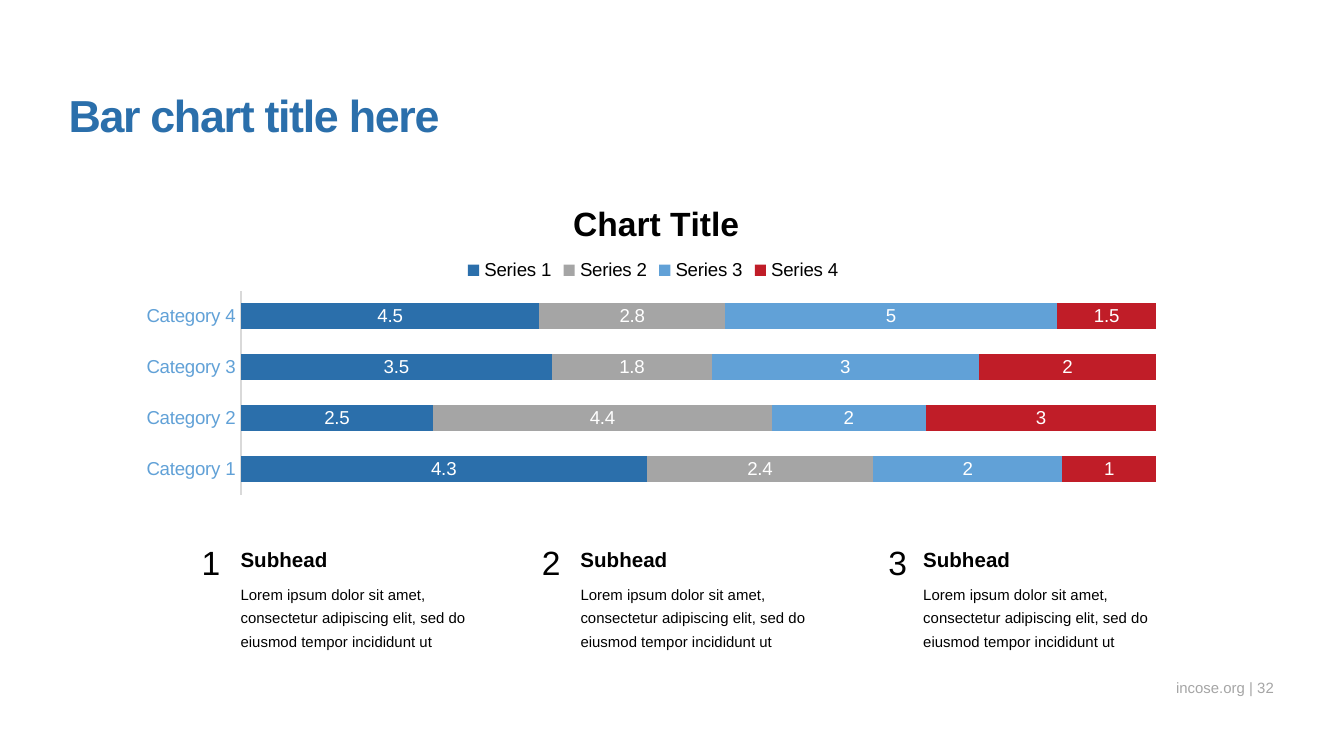
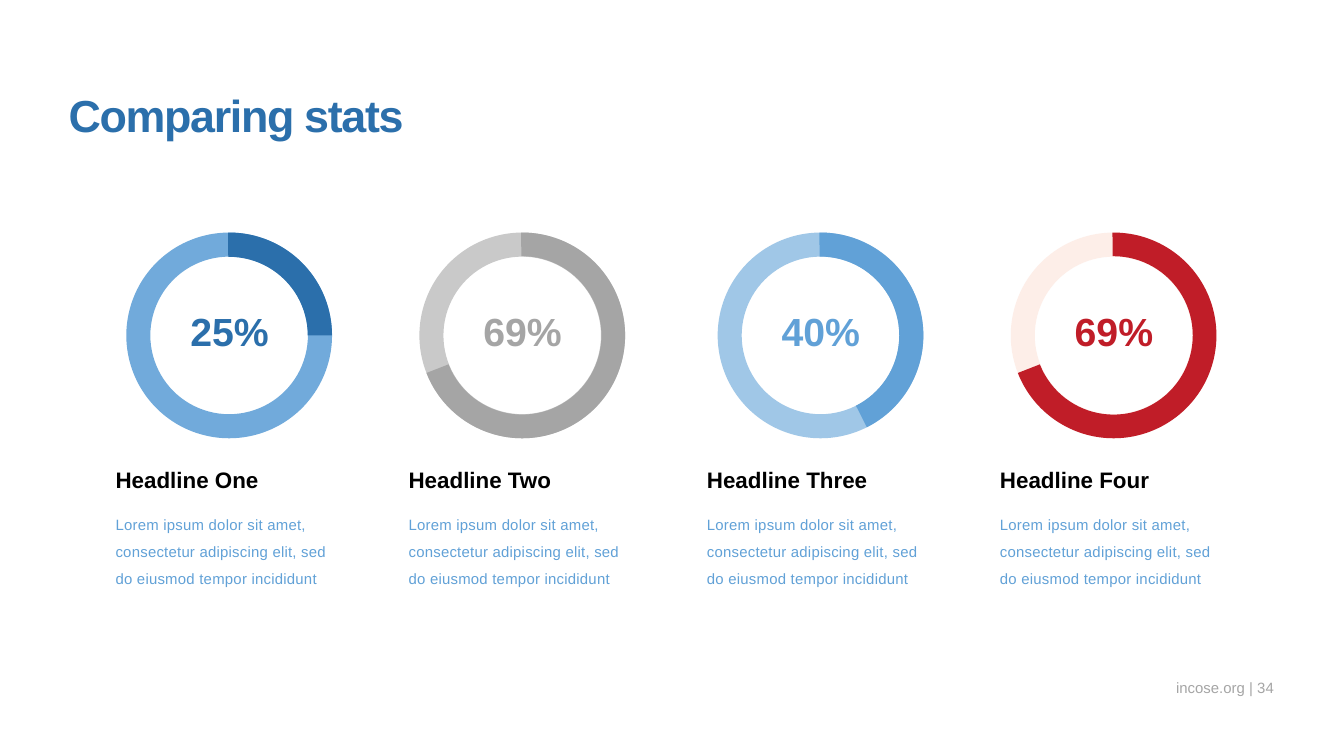
import pptx
import pptx.chart.data
import pptx.dml.color
import pptx.enum.chart
import pptx.enum.shapes
import pptx.enum.text
import pptx.oxml
import pptx.oxml.ns
import pptx.util

Pt = pptx.util.Pt
qn = pptx.oxml.ns.qn
ALIGN = pptx.enum.text.PP_ALIGN
ANCHOR = pptx.enum.text.MSO_ANCHOR
AUTO_SIZE = pptx.enum.text.MSO_AUTO_SIZE
SHAPE = pptx.enum.shapes.MSO_SHAPE

# Shared style
FONT = "Arial"
BLUE, GRAY, SKY, RED = "2B6FAB", "A5A5A5", "61A1D7", "C01D28"
BLACK, WHITE, AXIS_GRAY = "000000", "FFFFFF", "D9D9D9"
TITLE_BOX = (36.7, 46.8, 647.3, 28.8)
FOOTER_BOX = (603.4, 359.3, 81.4, 13.7)

# Bar chart slide
BAR_TITLE, BAR_PAGE = "Bar chart title here", 32
CHART_TITLE = "Chart Title"
CHART_BOX = (67, 92.2, 563.8, 176.4)
CATEGORIES = ["Category 1", "Category 2", "Category 3", "Category 4"]
SERIES = [
    ("Series 1", BLUE, (4.3, 2.5, 3.5, 4.5)),
    ("Series 2", GRAY, (2.4, 4.4, 1.8, 2.8)),
    ("Series 3", SKY, (2, 2, 3, 5)),
    ("Series 4", RED, (1, 3, 2, 1.5)),
]
NOTE_TEXT = ("Lorem ipsum dolor sit amet, consectetur adipiscing elit, "
             "sed do eiusmod tempor incididunt ut")
# number, number left, text left
NOTES = [("1", 100.8, 128.9), ("2", 283, 311), ("3", 468.7, 494.6)]

# Ring slide
RING_TITLE, RING_PAGE = "Comparing stats", 34
RING_TEXT = ("Lorem ipsum dolor sit amet, consectetur adipiscing elit, "
             "sed do eiusmod tempor incididunt")
RING_START = 269.37
# left, headline, percent, colour, track colour, track opacity, end angle, thickness
RINGS = [
    (61.9, "Headline One", "25%", BLUE, "71AADB", 100, 0, 0.118),
    (218.9, "Headline Two", "69%", GRAY, "C9C9C9", 100, 158.56, 0.115),
    (378.7, "Headline Three", "40%", SKY, "A0C7E7", 100, 63.23, 0.117),
    (535.7, "Headline Four", "69%", RED, "FCDED2", 50, 158.56, 0.115),
]


def color(value):
    return pptx.dml.color.RGBColor.from_string(value)


def points(box):
    return [Pt(value) for value in box]


def write(frame, text, size, ink=BLACK, bold=False, align=ALIGN.LEFT,
          anchor=ANCHOR.TOP, line=None, tracking=None, grow=False):
    """Fill a text frame; a growing frame keeps its insets and does not wrap."""
    frame.word_wrap = not grow
    frame.auto_size = AUTO_SIZE.SHAPE_TO_FIT_TEXT if grow else AUTO_SIZE.NONE
    frame.vertical_anchor = anchor
    if not grow:
        frame.margin_left = frame.margin_right = 0
        frame.margin_top = frame.margin_bottom = 0
    para = frame.paragraphs[0]
    para.alignment = align
    if line:
        para.line_spacing = line
    span = para.add_run()
    span.text = text
    set_font(span.font, size, ink, bold)
    if tracking:
        span.font._element.set("spc", str(round(tracking * 100)))


def set_font(font, size, ink, bold=False):
    font.name, font.size, font.bold = FONT, Pt(size), bold
    font.color.rgb = color(ink)


def add_text(page, box, text, size, **style):
    frame = page.shapes.add_textbox(*points(box)).text_frame
    write(frame, text, size, **style)
    return frame


def add_page(deck, title, number):
    page = deck.slides.add_slide(deck.slide_layouts[5])
    holder = page.shapes.title
    holder.left, holder.top, holder.width, holder.height = points(TITLE_BOX)
    write(holder.text_frame, title, 24, ink=BLUE, bold=True, tracking=-0.7)
    footer = add_text(page, FOOTER_BOX, f"incose.org | {number}", 8, ink=GRAY,
                      align=ALIGN.RIGHT, anchor=ANCHOR.BOTTOM, line=1.5)
    footer.margin_right = Pt(2.2)
    return page


def place_part(part, inner=False, **shares):
    """Place a chart part by shares of the chart's width and height."""
    old = part.find(qn("c:layout"))
    if old is not None:
        part.remove(old)
    layout = pptx.oxml.parse_xml(
        f"<c:layout {pptx.oxml.ns.nsdecls('c')}><c:manualLayout/></c:layout>")
    manual = layout.find(qn("c:manualLayout"))
    settings = [("layoutTarget", "inner")] if inner else []
    settings += [("xMode", "edge"), ("yMode", "edge"), *shares.items()]
    for name, value in settings:
        child = manual.makeelement(qn("c:" + name), {"val": str(value)})
        manual.append(child)
    overlay = part.find(qn("c:overlay"))
    if overlay is not None:
        overlay.addprevious(layout)
    else:
        part.insert(0, layout)


def add_bar_chart(page):
    data = pptx.chart.data.CategoryChartData()
    data.categories = CATEGORIES
    for name, _, values in SERIES:
        data.add_series(name, values)
    chart = page.shapes.add_chart(
        pptx.enum.chart.XL_CHART_TYPE.BAR_STACKED_100,
        *points(CHART_BOX), data).chart
    set_font(chart.font, 10, BLACK)

    # Title and legend
    span = chart.chart_title.text_frame.paragraphs[0].add_run()
    span.text = CHART_TITLE
    set_font(span.font, 18, BLACK, bold=True)
    chart.has_legend = True
    chart.legend.position = pptx.enum.chart.XL_LEGEND_POSITION.TOP
    chart.legend.include_in_layout = False
    set_font(chart.legend.font, 10, BLACK)
    place_part(chart.chart_title._element, x=0.42, y=0.07)
    place_part(chart.legend._element, x=0.32, y=0.25)
    plot_area = chart._chartSpace.find(".//" + qn("c:plotArea"))
    place_part(plot_area, inner=True, x=0.11, y=0.36, w=0.87, h=0.62)

    # Axes
    chart.value_axis.visible = False
    chart.value_axis.has_major_gridlines = False
    axis = chart.category_axis
    axis.major_tick_mark = pptx.enum.chart.XL_TICK_MARK.NONE
    axis.format.line.color.rgb = color(AXIS_GRAY)
    axis.format.line.width = Pt(0.75)
    set_font(axis.tick_labels.font, 10, SKY)

    # Bars and labels
    plot = chart.plots[0]
    plot.gap_width, plot.overlap = 95, 100
    plot.vary_by_categories = False
    for series, (_, fill, _) in zip(plot.series, SERIES):
        series.format.fill.solid()
        series.format.fill.fore_color.rgb = color(fill)
        series.data_labels.show_value = True
        set_font(series.data_labels.font, 10, WHITE)


def add_ring_part(group, kind, box, fill, adjustments, opacity=100):
    shape = group.shapes.add_shape(kind, *points(box))
    shape.shadow.inherit = False
    for index, value in enumerate(adjustments):
        shape.adjustments[index] = value
    shape.line.fill.background()
    shape.fill.solid()
    shape.fill.fore_color.rgb = color(fill)
    if opacity < 100:
        tone = shape._element.spPr.find(".//" + qn("a:srgbClr"))
        alpha = tone.makeelement(qn("a:alpha"), {"val": str(opacity * 1000)})
        tone.append(alpha)


def build_bar_page(deck):
    page = add_page(deck, BAR_TITLE, BAR_PAGE)
    add_bar_chart(page)
    for number, number_left, left in NOTES:
        add_text(page, (number_left, 286.6, 24.5, 28.8), number, 18,
                 align=ALIGN.CENTER, grow=True)
        add_text(page, (left, 311, 121, 31), NOTE_TEXT, 8, line=1.3)
        add_text(page, (left, 294.5, 108, 18), "Subhead", 11, bold=True, line=0.9)


def build_ring_page(deck):
    page = add_page(deck, RING_TITLE, RING_PAGE)
    for left, headline, percent, ink, track, opacity, end, thickness in RINGS:
        add_text(page, (left, 271.4, 121.7, 51), RING_TEXT, 8, ink=SKY,
                 line=1.5, tracking=0.1)
        add_text(page, (left, 251.3, 121.7, 21.6), headline, 12, bold=True, line=0.9)
        group = page.shapes.add_group_shape()
        ring_box = (left + 5.8, 124.6, 110.2, 110.2)
        add_ring_part(group, SHAPE.DONUT, ring_box, track, [0.117], opacity)
        # Arc angles are stored in 60000ths of a degree, adjustments in 100000ths
        add_ring_part(group, SHAPE.BLOCK_ARC, ring_box, ink,
                      [RING_START * 0.6, end * 0.6, thickness])
        add_text(page, (left + 32.6, 161.3, 56.9, 32.4), percent, 21, ink=ink,
                 bold=True, align=ALIGN.CENTER, grow=True)


def main():
    deck = pptx.Presentation()
    deck.slide_width, deck.slide_height = Pt(720), Pt(405)
    build_bar_page(deck)
    build_ring_page(deck)
    deck.save("out.pptx")


if __name__ == "__main__":
    main()
